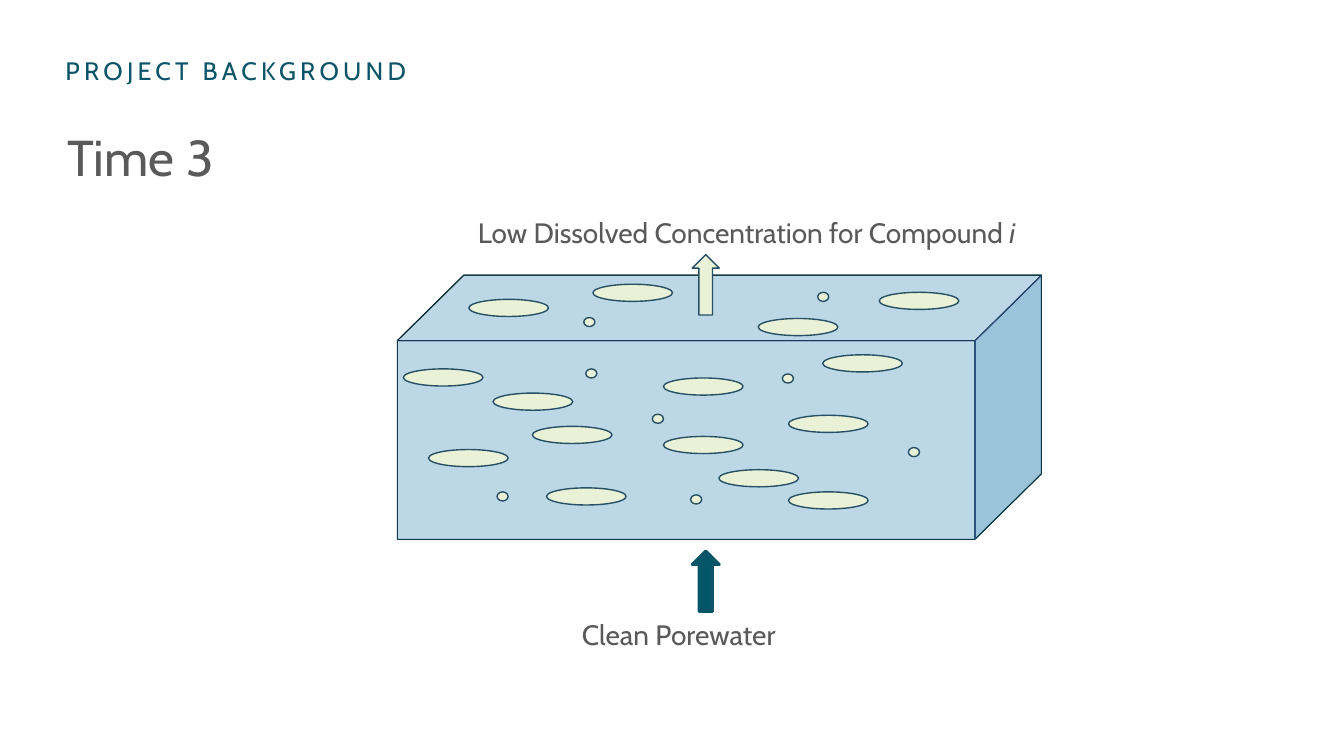
"""Build the Time 3 slide: a sediment block with clean porewater flowing through it."""
from lxml.etree import SubElement
from pptx import Presentation
from pptx.dml.color import RGBColor
from pptx.enum.shapes import MSO_CONNECTOR, MSO_SHAPE
from pptx.enum.text import MSO_ANCHOR, MSO_AUTO_SIZE, PP_ALIGN
from pptx.oxml.ns import qn
from pptx.util import Inches, Pt

TEAL = RGBColor(0x0C, 0x55, 0x68)
DEEP_TEAL = RGBColor(0x03, 0x55, 0x68)
GRAY = RGBColor(0x5A, 0x5A, 0x5A)
FRONT_BLUE = RGBColor(0xBC, 0xD7, 0xE5)
SIDE_BLUE = RGBColor(0x9B, 0xC3, 0xD9)
PALE_GREEN = RGBColor(0xE9, 0xF1, 0xD7)
OUTLINE = RGBColor(0x27, 0x4F, 0x65)
EDGE_BLUE = RGBColor(0x2F, 0x52, 0x8F)
EDGE_DARK = RGBColor(0x00, 0x34, 0x3D)
BLACK = RGBColor(0, 0, 0)


def paint(sp, fill, line, width):
    sp.shadow.inherit = False
    if fill is None:
        sp.fill.background()
    else:
        sp.fill.solid()
        sp.fill.fore_color.rgb = fill
    sp.line.color.rgb = line
    sp.line.width = Pt(width)


def write(sp, box, texts, size, color, inset=0):
    sp.left, sp.top, sp.width, sp.height = [Inches(v) for v in box]
    tf = sp.text_frame
    tf.word_wrap = True
    tf.auto_size = MSO_AUTO_SIZE.NONE
    tf.vertical_anchor = MSO_ANCHOR.MIDDLE
    tf.margin_left = tf.margin_right = 0
    tf.margin_top = tf.margin_bottom = Inches(inset)
    p = tf.paragraphs[0]
    p.alignment = PP_ALIGN.LEFT
    for text in texts:
        r = p.add_run()
        r.text = text
        r.font.name = "Cabin"
        r.font.size = Pt(size)
        r.font.color.rgb = color
    return p.runs


prs = Presentation()
prs.slide_width, prs.slide_height = Inches(13.33), Inches(7.5)
s = prs.slides.add_slide(prs.slide_layouts[5])

write(s.shapes.title, (0.67, 1.18, 12, 0.75), ["Time 3"], 36, GRAY, 0.05)
section = s.shapes.add_textbox(0, 0, 0, 0)
runs = write(section, (0.65, 0.55, 6.5, 0.3), ["PROJECT BACKGROUND"], 18, TEAL)
runs[0]._r.get_or_add_rPr().set("spc", "300")

top_label = s.shapes.add_textbox(0, 0, 0, 0)
texts = ["Low Dissolved Concentration for Compound ", "i"]
runs = write(top_label, (4.74, 2.13, 5.64, 0.34), texts, 20, GRAY)
runs[1].font.italic = True
bottom_label = s.shapes.add_textbox(0, 0, 0, 0)
write(bottom_label, (5.77, 6.12, 2.08, 0.34), ["Clean Porewater"], 20, GRAY)

left, right, top, bottom = 3.94, 9.67, 3.38, 5.35
back_left, back_right, back_top, back_bottom = 4.6, 10.33, 2.73, 4.7
front = s.shapes.add_shape(MSO_SHAPE.RECTANGLE, Inches(left), Inches(top),
                           Inches(right - left), Inches(bottom - top))
paint(front, FRONT_BLUE, OUTLINE, 0.75)

side_face = [(right, top), (back_right, back_top), (back_right, back_bottom), (right, bottom)]
top_face = [(left, top), (back_left, back_top), (back_right, back_top), (right, top)]
silhouette = top_face[:3] + [(back_right, back_bottom), (right, bottom), (left, bottom)]
front_edge = [(left, top), (right, top), (back_right, back_top)]
for points, closed, fill, line, width in [
    (side_face, True, SIDE_BLUE, OUTLINE, 0.75),
    (top_face, True, FRONT_BLUE, BLACK, 0.75),
    (silhouette, True, None, EDGE_DARK, 0.63),
    (front_edge, False, None, EDGE_BLUE, 0.63),
]:
    corners = [(Inches(x), Inches(y)) for x, y in points]
    fb = s.shapes.build_freeform(*corners[0])
    fb.add_line_segments(corners[1:], close=closed)
    paint(fb.convert_to_shape(), fill, line, width)

corner = s.shapes.add_connector(MSO_CONNECTOR.STRAIGHT, Inches(right), Inches(top),
                                Inches(right), Inches(bottom))
corner.line.color.rgb = EDGE_BLUE
corner.line.width = Pt(0.63)
SubElement(corner._element.spPr, qn("a:effectLst"))

large = [(4, 3.66), (4.89, 3.9), (4.25, 4.46), (6.58, 3.75), (5.42, 4.84), (6.58, 4.33),
         (8.16, 3.52), (5.28, 4.23), (7.82, 4.88), (7.82, 4.12), (7.13, 4.66),
         (4.65, 2.97), (5.88, 2.82), (8.72, 2.9), (7.52, 3.16)]
small = [(5.81, 3.66), (7.76, 3.71), (6.85, 4.91), (4.93, 4.88), (6.47, 4.11), (9.01, 4.44),
         (5.79, 3.15), (8.11, 2.9)]
for spots, w, h in [(large, 0.79, 0.17), (small, 0.11, 0.09)]:
    for x, y in spots:
        sp = s.shapes.add_shape(MSO_SHAPE.OVAL, Inches(x), Inches(y), Inches(w), Inches(h))
        paint(sp, PALE_GREEN, OUTLINE, 1)

for y, fill, line, width in [(5.63, DEEP_TEAL, TEAL, 2), (2.69, PALE_GREEN, OUTLINE, 1)]:
    arrow = s.shapes.add_shape(MSO_SHAPE.RIGHT_ARROW, Inches(6.7), Inches(y),
                               Inches(0.6), Inches(0.27))
    arrow.rotation = 270
    paint(arrow, fill, line, width)

prs.save("out.pptx")
